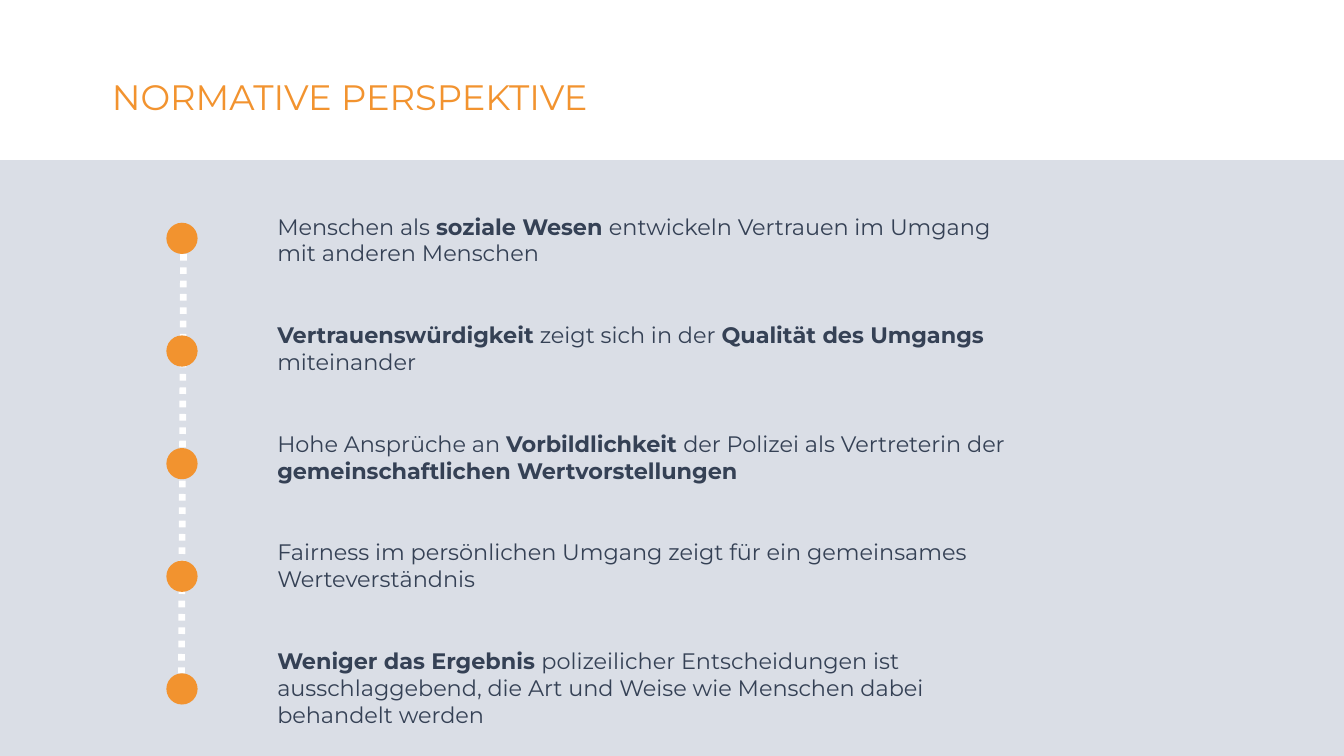
from typing import NamedTuple

from lxml import etree
from pptx import Presentation
from pptx.dml.color import RGBColor
from pptx.enum.dml import MSO_LINE
from pptx.enum.shapes import MSO_CONNECTOR, MSO_SHAPE
from pptx.enum.text import MSO_ANCHOR, MSO_AUTO_SIZE, PP_ALIGN
from pptx.oxml.ns import qn
from pptx.util import Inches, Pt

RECTANGLE = MSO_SHAPE.RECTANGLE
OVAL = MSO_SHAPE.OVAL
STRAIGHT = MSO_CONNECTOR.STRAIGHT
DOTTED = MSO_LINE.ROUND_DOT
TOP = MSO_ANCHOR.TOP
MIDDLE = MSO_ANCHOR.MIDDLE
NO_AUTOFIT = MSO_AUTO_SIZE.NONE
LEFT = PP_ALIGN.LEFT

FONT = "Montserrat"
ORANGE = "F2932F"
WHITE = "FFFFFF"
NAVY = "354155"
PALE_BLUE = "DADEE6"

TITLE_LAYOUT = 1
DOT_COUNT = 5
DOT_SIZE = 0.31
DOT_LEFT = 1.65
FIRST_DOT_TOP = 2.21
LAST_DOT_TOP = 6.68
STATEMENT_GAP = 39.2


class Box(NamedTuple):
    left: float
    top: float
    width: float
    height: float


class Span(NamedTuple):
    text: str
    bold: bool = False


STATEMENTS = [
    [
        Span("Menschen als "),
        Span("soziale Wesen ", True),
        Span("entwickeln Vertrauen im Umgang mit anderen Menschen"),
    ],
    [
        Span("Vertrauenswürdigkeit", True),
        Span(" zeigt sich in der "),
        Span("Qualität des Umgangs ", True),
        Span("miteinander"),
    ],
    [
        Span("Hohe Ansprüche an "),
        Span("Vorbildlichkeit ", True),
        Span("der Polizei als Vertreterin der "),
        Span("gemeinschaftlichen Wertvorstellungen", True),
    ],
    [Span("Fairness im persönlichen Umgang zeigt für ein gemeinsames Werteverständnis")],
    [
        Span("Weniger das Ergebnis ", True),
        Span(
            "polizeilicher Entscheidungen ist ausschlaggebend, "
            "die Art und Weise wie Menschen dabei behandelt werden"
        ),
    ],
]


def color(hex_value: str) -> RGBColor:
    return RGBColor.from_string(hex_value)


def add_filled_shape(slide, kind, box: Box, fill: str):
    shape = slide.shapes.add_shape(kind, *map(Inches, box))
    shape.shadow.inherit = False
    shape.fill.solid()
    shape.fill.fore_color.rgb = color(fill)
    shape.line.fill.background()
    return shape


def prepare_placeholder(shape, box: Box, anchor):
    shape.left, shape.top, shape.width, shape.height = map(Inches, box)
    text_frame = shape.text_frame
    text_frame.word_wrap = True
    text_frame.auto_size = NO_AUTOFIT
    text_frame.vertical_anchor = anchor
    return text_frame


def write_paragraph(
    paragraph,
    spans: list[Span],
    *,
    size: float,
    font_color: str,
    space_before: float = 0,
    line_spacing: float = 1.0,
    indent: float = 0,
) -> None:
    paragraph.alignment = LEFT
    paragraph.space_before = Pt(space_before)
    paragraph.space_after = Pt(0)
    paragraph.line_spacing = line_spacing
    properties = paragraph._p.get_or_add_pPr()
    properties.set("marL", str(Inches(indent)))
    properties.set("indent", "0")
    etree.SubElement(properties, qn("a:buNone"))
    for span in spans:
        run = paragraph.add_run()
        run.text = span.text
        run.font.name = FONT
        run.font.size = Pt(size)
        run.font.bold = span.bold
        run.font.color.rgb = color(font_color)


def add_header(slide, width: float) -> None:
    band = add_filled_shape(slide, RECTANGLE, Box(0, 0, width, 1.58), WHITE)
    band.line.color.rgb = color(WHITE)
    band.line.width = Pt(1)
    band.element.getparent().insert(2, band.element)
    text_frame = prepare_placeholder(slide.shapes.title, Box(1.01, 0.73, 8.62, 0.51), MIDDLE)
    write_paragraph(
        text_frame.paragraphs[0],
        [Span("NORMATIVE PERSPEKTIVE")],
        size=25.2,
        font_color=ORANGE,
        line_spacing=0.9,
    )


def add_statements(slide) -> None:
    text_frame = prepare_placeholder(slide.placeholders[1], Box(2.31, 2.06, 7.91, 5.44), TOP)
    for index, spans in enumerate(STATEMENTS):
        paragraph = text_frame.add_paragraph() if index else text_frame.paragraphs[0]
        write_paragraph(
            paragraph,
            spans,
            size=16,
            font_color=NAVY,
            space_before=STATEMENT_GAP if index else 0,
            indent=0.34,
        )


def add_timeline(slide) -> None:
    connector = slide.shapes.add_connector(
        STRAIGHT, Inches(1.82), Inches(FIRST_DOT_TOP + DOT_SIZE), Inches(1.8), Inches(LAST_DOT_TOP)
    )
    connector.line.color.rgb = color(WHITE)
    connector.line.width = Pt(4.75)
    connector.line.dash_style = DOTTED
    etree.SubElement(connector.element.spPr, qn("a:effectLst"))
    step = (LAST_DOT_TOP - FIRST_DOT_TOP) / (DOT_COUNT - 1)
    for index in range(DOT_COUNT):
        box = Box(DOT_LEFT, FIRST_DOT_TOP + index * step, DOT_SIZE, DOT_SIZE)
        add_filled_shape(slide, OVAL, box, ORANGE)


def main() -> None:
    presentation = Presentation()
    presentation.slide_width = Inches(13.33)
    presentation.slide_height = Inches(7.5)
    slide = presentation.slides.add_slide(presentation.slide_layouts[TITLE_LAYOUT])
    slide.background.fill.solid()
    slide.background.fill.fore_color.rgb = color(PALE_BLUE)
    add_header(slide, 13.33)
    add_statements(slide)
    add_timeline(slide)
    presentation.save("out.pptx")


if __name__ == "__main__":
    main()
